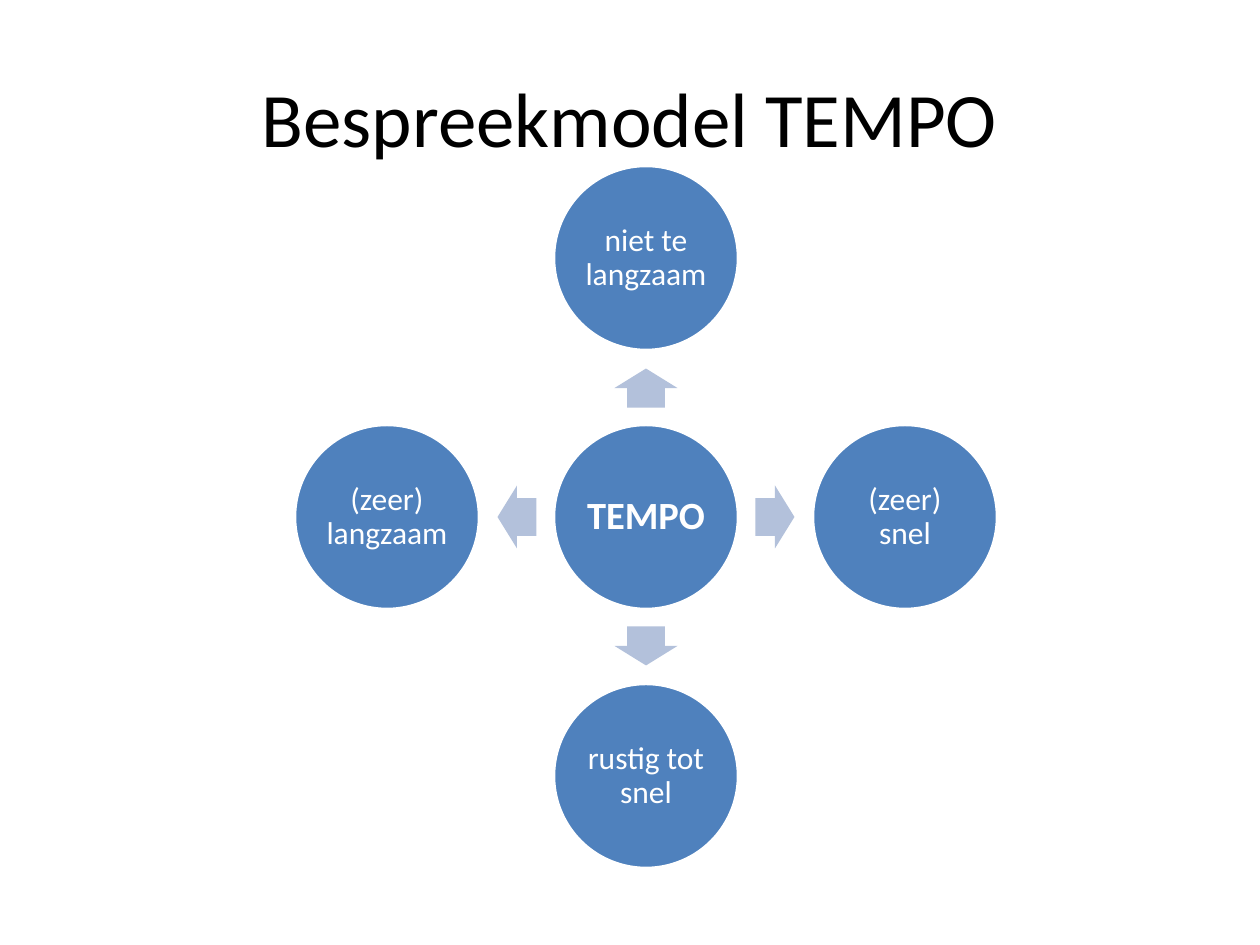
from pptx import Presentation
from pptx.dml.color import RGBColor
from pptx.enum.shapes import MSO_SHAPE as Shape
from pptx.enum.text import MSO_ANCHOR as Anchor, PP_ALIGN as Align
from pptx.util import Emu, Pt

BLACK = RGBColor(0x00, 0x00, 0x00)
WHITE = RGBColor(0xFF, 0xFF, 0xFF)
BLUE = RGBColor(0x4F, 0x81, 0xBD)
PALE_BLUE = RGBColor(0xB3, 0xC1, 0xDB)


def px(length):
    """Turn pixels, 126 to the inch, into EMU."""
    return Emu(round(length * 914400 / 126))


def write(shape, text, size, color, bold=False, inset=12, spacing=1.0):
    frame = shape.text_frame
    frame.word_wrap = True
    frame.vertical_anchor = Anchor.MIDDLE
    frame.margin_left = frame.margin_right = px(inset)
    frame.margin_top = frame.margin_bottom = px(min(inset, 6))
    paragraph = frame.paragraphs[0]
    paragraph.alignment = Align.CENTER
    paragraph.line_spacing = spacing
    run = paragraph.add_run()
    run.text = text
    run.font.name = "Calibri"
    run.font.size = Pt(size)
    run.font.bold = bold
    run.font.color.rgb = color


prs = Presentation()
prs.slide_width, prs.slide_height = px(1260), px(945)
slide = prs.slides.add_slide(prs.slide_layouts[6])
shapes = slide.shapes

title = shapes.add_textbox(px(63), px(38), px(1134), px(157))
write(title, "Bespreekmodel TEMPO", 44, BLACK)

# Hub with four spokes: text, direction (x, y), size, bold
HUB_X, HUB_Y = 646, 517
DIAMETER, SPOKE = 185, 259
ARROW_LENGTH, ARROW_WIDTH, ARROW_REACH = 39, 63, 129
circles = [
    ("TEMPO", 0, 0, 22, True),
    ("niet te langzaam", 0, -1, 18, False),
    ("(zeer) snel", 1, 0, 18, False),
    ("rustig tot snel", 0, 1, 18, False),
    ("(zeer) langzaam", -1, 0, 18, False),
]
for text, dx, dy, size, bold in circles:
    circle = shapes.add_shape(
        Shape.OVAL,
        px(HUB_X + dx * SPOKE - DIAMETER / 2),
        px(HUB_Y + dy * SPOKE - DIAMETER / 2),
        px(DIAMETER), px(DIAMETER))
    circle.shadow.inherit = False
    circle.fill.solid()
    circle.fill.fore_color.rgb = BLUE
    circle.line.color.rgb = WHITE
    circle.line.width = Pt(2)
    write(circle, text, size, WHITE, bold=bold, inset=4, spacing=0.9)

for rotation, dx, dy in [(270, 0, -1), (0, 1, 0), (90, 0, 1), (180, -1, 0)]:
    arrow = shapes.add_shape(
        Shape.RIGHT_ARROW,
        px(HUB_X + dx * ARROW_REACH - ARROW_LENGTH / 2),
        px(HUB_Y + dy * ARROW_REACH - ARROW_WIDTH / 2),
        px(ARROW_LENGTH), px(ARROW_WIDTH))
    arrow.rotation = rotation
    arrow.adjustments[0] = 0.6
    arrow.adjustments[1] = 0.5
    arrow.shadow.inherit = False
    arrow.fill.solid()
    arrow.fill.fore_color.rgb = PALE_BLUE
    arrow.line.fill.background()

prs.save("out.pptx")
